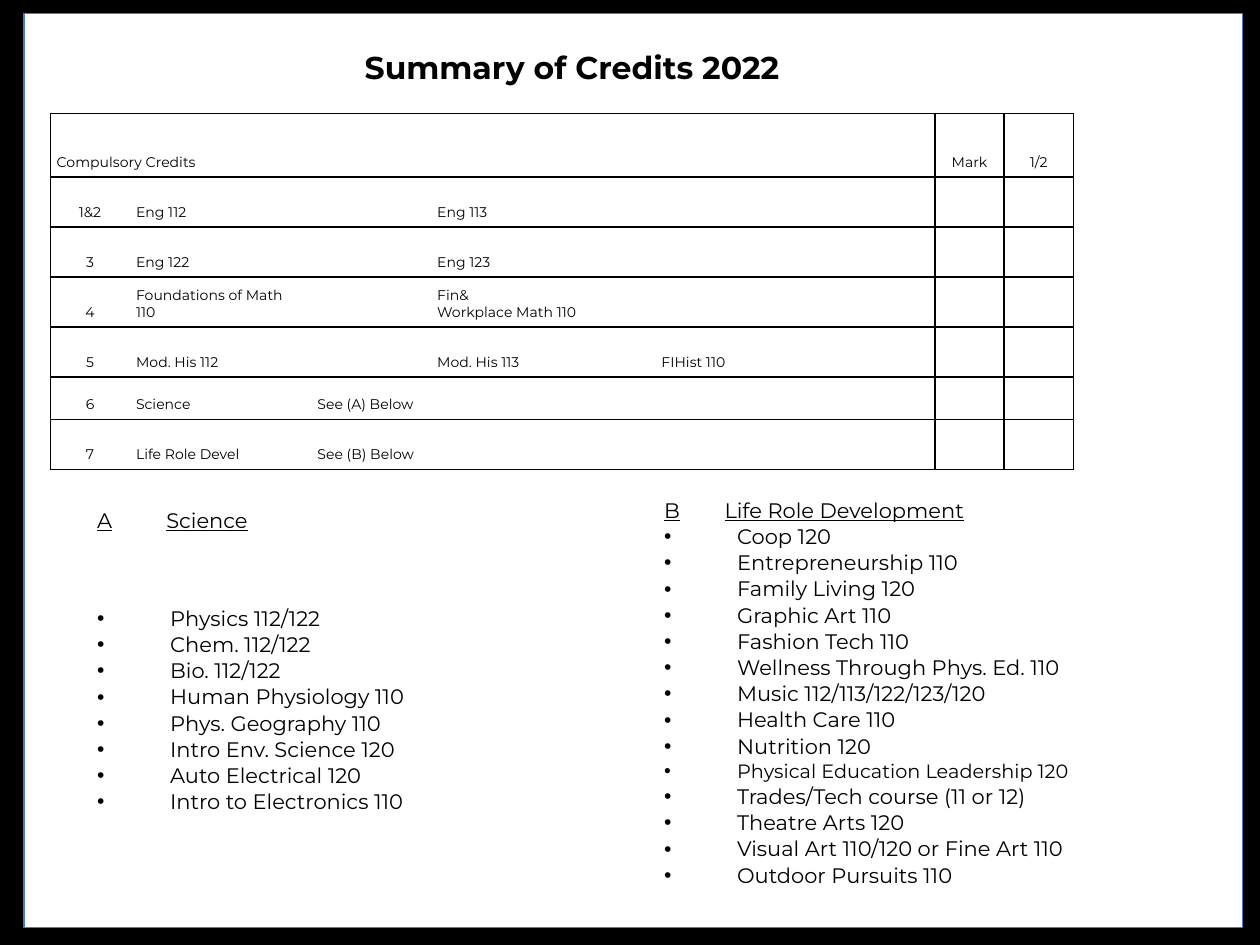
from lxml.etree import SubElement
from pptx import Presentation
from pptx.dml.color import RGBColor
from pptx.enum.shapes import MSO_SHAPE
from pptx.enum.text import MSO_ANCHOR, MSO_AUTO_SIZE, PP_ALIGN
from pptx.oxml.ns import qn
from pptx.util import Inches, Pt

BLACK = RGBColor(0, 0, 0)
WHITE = RGBColor(255, 255, 255)
BLUE = RGBColor(0x4A, 0x7E, 0xBB)
FONT = "Montserrat"
PAD = Inches(0.05)

TITLE = "Summary of Credits 2022"
COLS = [0.63, 1.44, 0.95, 1.25, 0.53, 1.15, 1.07, 0.55, 0.55, 0.88]
ROWS = [0.51, 0.4, 0.4, 0.4, 0.4, 0.34, 0.4]  # shares of the height
HEIGHT = 2.83
MARK, HALF = 7, 8  # columns with a full grid
CELLS = [  # column: text
    {0: "Compulsory Credits", MARK: "Mark", HALF: "1/2"},
    {0: "1&2", 1: "Eng 112", 3: "Eng 113"},
    {0: "3", 1: "Eng 122", 3: "Eng 123"},
    {0: "4", 1: "Foundations of Math 110", 3: "Fin&\vWorkplace Math 110"},
    {0: "5", 1: "Mod. His 112", 3: "Mod. His 113", 5: "FIHist 110"},
    {0: "6", 1: "Science", 2: "See (A) Below"},
    {0: "7", 1: "Life Role Devel", 2: "See (B) Below"},
]
SPANS = [(0, 0), (5, 2), (6, 2)]  # row, first of two columns

LISTS = [
    {"box": (0.67, 4, 4.42, 2.83), "head": "A\tScience", "tab": 0.55, "gap": 43,
     "items": ["Physics 112/122", "Chem. 112/122", "Bio. 112/122",
               "Human Physiology 110", "Phys. Geography 110",
               "Intro Env. Science 120", "Auto Electrical 120",
               "Intro to Electronics 110"]},
    {"box": (5.17, 3.92, 3.5, 3.25), "head": "B\tLife Role Development",
     "tab": 0.48, "gap": 2,
     "items": ["Coop 120", "Entrepreneurship 110", "Family Living 120",
               "Graphic Art 110", "Fashion Tech 110",
               "Wellness Through Phys. Ed. 110", "Music 112/113/122/123/120",
               "Health Care 110", "Nutrition 120",
               "Physical Education Leadership 120",
               "Trades/Tech course (11 or 12)", "Theatre Arts 120",
               "Visual Art 110/120 or Fine Art 110", "Outdoor Pursuits 110"]},
]
SMALL = "Physical Education Leadership 120"


def place(shape, box, line):
    shape.left, shape.top, shape.width, shape.height = map(Inches, box)
    shape.line.color.rgb = line
    shape.line.width = Pt(0.75)


def style(para, size, bold=False):
    font = para.font
    font.name, font.size, font.bold = FONT, Pt(size), bold
    font.color.rgb = BLACK


def set_frame(frame, side=PAD):
    frame.margin_left = frame.margin_right = side
    frame.margin_top = frame.margin_bottom = PAD
    frame.vertical_anchor = MSO_ANCHOR.TOP
    frame.auto_size = MSO_AUTO_SIZE.NONE
    frame.word_wrap = True


def indent(para, left, mark=None):
    """Set a hanging indent, with a bullet if a mark is given."""
    props = para._p.get_or_add_pPr()
    props.set("marL", str(Inches(left)))
    props.set("indent", str(-Inches(left)))
    rest = props.findall(qn("a:defRPr"))
    if mark:
        SubElement(props, qn("a:buChar"), char=mark)
    else:
        SubElement(props, qn("a:buNone"))
    props.extend(rest)


def edge(cell, sides):
    """Draw the named sides (L, R, T, B) and clear the others."""
    props = cell._tc.get_or_add_tcPr()
    for spot, side in enumerate("LRTB"):
        line = SubElement(props, qn("a:ln" + side), w=str(Pt(1)))
        if side in sides:
            fill = SubElement(line, qn("a:solidFill"))
            SubElement(fill, qn("a:srgbClr"), val=str(BLACK))
        else:
            SubElement(line, qn("a:noFill"))
        props.insert(spot, line)


def sides(col):
    if col in (MARK, HALF):
        return "LRTB"
    return {0: "LTB", 6: "RTB", 9: "L"}.get(col, "TB")


def add_grid(slide):
    frame = slide.shapes.add_table(
        len(ROWS), len(COLS), Inches(0.4), Inches(0.9),
        Inches(sum(COLS)), Inches(HEIGHT))
    table = frame.table
    table.first_row = table.horz_banding = False
    for col, width in zip(table.columns, COLS):
        col.width = Inches(width)
    for r, share in enumerate(ROWS):
        table.rows[r].height = Inches(HEIGHT * share / sum(ROWS))
        for c in range(len(COLS)):
            cell = table.cell(r, c)
            cell.fill.background()
            cell.margin_left = cell.margin_right = PAD
            cell.margin_top = cell.margin_bottom = PAD
            cell.vertical_anchor = MSO_ANCHOR.BOTTOM
            cell.text = CELLS[r].get(c, "")
            para = cell.text_frame.paragraphs[0]
            style(para, 8)
            if c in (MARK, HALF) or (c == 0 and r > 0):
                para.alignment = PP_ALIGN.CENTER
            edge(cell, sides(c))
    for r, c in SPANS:
        table.cell(r, c).merge(table.cell(r, c + 1))


def fill_list(shape, data):
    place(shape, data["box"], WHITE)
    frame = shape.text_frame
    set_frame(frame, Inches(0.1))
    frame.text = "\n".join([data["head"], *data["items"]])
    for i, para in enumerate(frame.paragraphs):
        style(para, 11 if para.text == SMALL else 12)
        para.line_spacing = 0.9
        para.space_before = Pt(data["gap"] if i == 1 else 2)
        if i == 0:
            para.font.underline = True
            indent(para, data["tab"])
        else:
            indent(para, 0.58, "•")


def main():
    deck = Presentation()
    deck.slide_width, deck.slide_height = Inches(10), Inches(7.5)
    slide = deck.slides.add_slide(deck.slide_layouts[3])
    slide.background.fill.solid()
    slide.background.fill.fore_color.rgb = BLACK

    panel = slide.shapes.add_shape(MSO_SHAPE.RECTANGLE, 0, 0, 0, 0)
    place(panel, (0.19, 0.11, 9.67, 7.25), BLUE)
    panel.shadow.inherit = False
    panel.fill.solid()
    panel.fill.fore_color.rgb = WHITE
    slide.shapes._spTree.insert(2, panel._element)  # behind the text

    title, *bodies = slide.placeholders
    place(title, (0.5, 0.33, 8.08, 0.42), WHITE)
    set_frame(title.text_frame)
    title.text_frame.text = TITLE
    para = title.text_frame.paragraphs[0]
    para.alignment = PP_ALIGN.CENTER
    style(para, 18, bold=True)

    add_grid(slide)
    for body, data in zip(bodies, LISTS):
        fill_list(body, data)
    deck.save("out.pptx")


if __name__ == "__main__":
    main()
